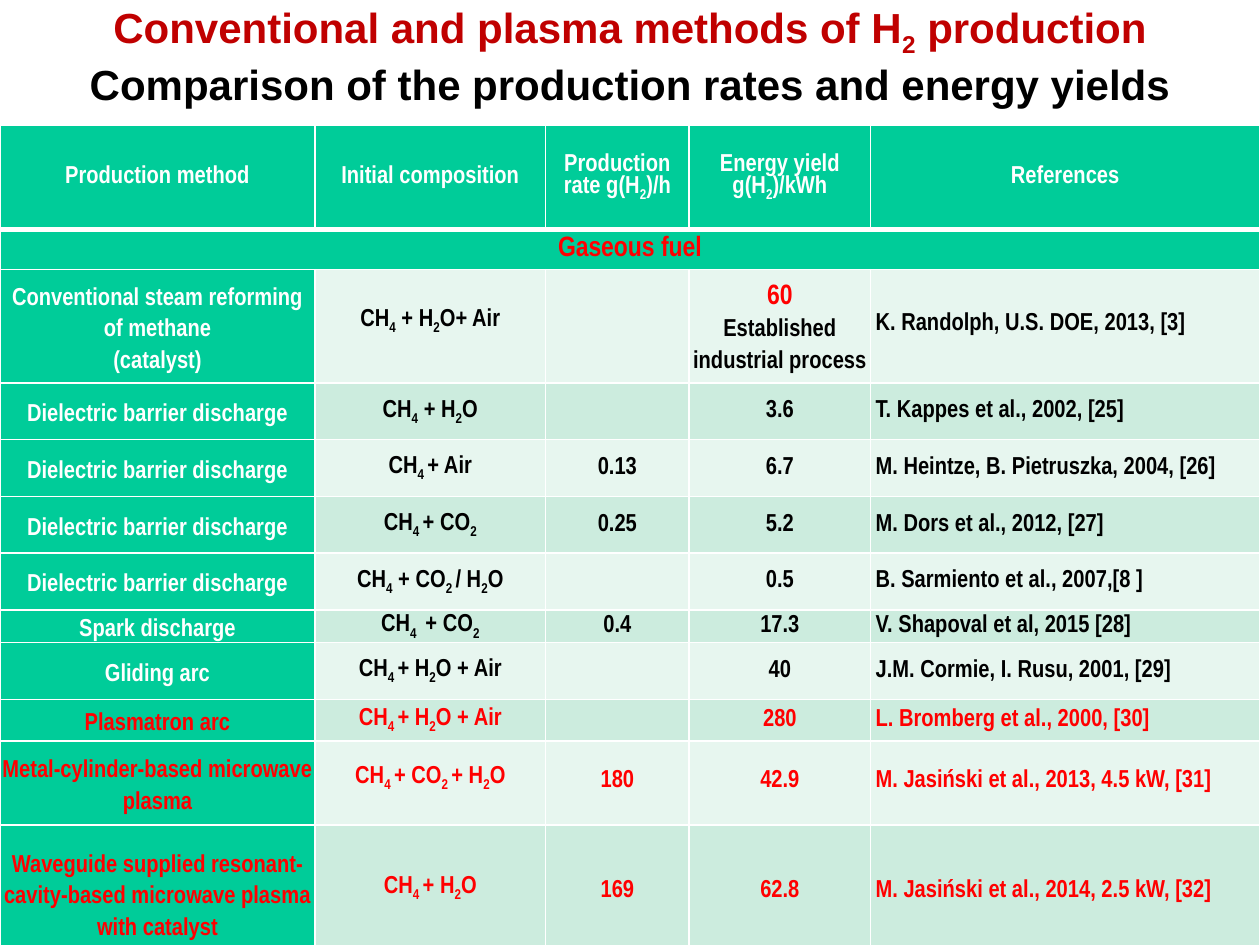
from dataclasses import dataclass
from lxml.etree import SubElement
from pptx import Presentation
from pptx.dml.color import RGBColor
from pptx.enum.text import MSO_ANCHOR, MSO_AUTO_SIZE, PP_ALIGN
from pptx.oxml.ns import qn
from pptx.table import _Cell
from pptx.text.text import Font, _Paragraph
from pptx.util import Inches, Pt

GREEN, PALE, MINT = "00CC99", "E7F6EF", "CCECDE"
WHITE, BLACK, RED, DARK_RED = "FFFFFF", "000000", "FF0000", "C00000"
COLUMN_WIDTHS = [2.5, 1.83, 1.14, 1.44, 3.09]
HEADER_HEIGHT, SECTION_HEIGHT = 0.83, 0.32
PROPORTIONAL, EXACT, NARROW = 0.9, Pt(18), Pt(11)
HEADERS = ["Production method", "Initial composition", "Production rate g(H{2})/h",
           "Energy yield g(H{2})/kWh", "References"]
TITLE_LINES = [("Conventional and plasma methods of H{2} production", DARK_RED),
               ("Comparison of the production rates and energy yields", BLACK)]


@dataclass
class Method:
    height: float
    name: str
    composition: str
    rate: str
    energy: str
    reference: str
    highlighted: bool = False
    spacing: float | int = PROPORTIONAL


BARRIER = "Dielectric barrier discharge"
METHODS = [
    Method(0.9, "Conventional steam reforming of methane\n(catalyst)", "CH{4} + H{2}O+ Air", "",
           "60\nEstablished industrial process", "K. Randolph, U.S. DOE, 2013, [3]", spacing=NARROW),
    Method(0.45, BARRIER, "CH{4} + H{2}O", "", "3.6", "T. Kappes et al., 2002, [25]"),
    Method(0.45, BARRIER, "CH{4 }+ Air", "0.13", "6.7", "M. Heintze, B. Pietruszka, 2004, [26]"),
    Method(0.45, BARRIER, "CH{4 }+ CO{2}", "0.25", "5.2", "M. Dors et al., 2012, [27]"),
    Method(0.45, BARRIER, "CH{4} + CO{2 }/ H{2}O", "", "0.5", "B. Sarmiento et al., 2007,[8 ]"),
    Method(0.26, "Spark discharge", "CH{4 } + CO{2}", "0.4", "17.3", "V. Shapoval et al, 2015 [28]"),
    Method(0.45, "Gliding arc", "CH{4 }+ H{2}O + Air", "", "40", "J.M. Cormie, I. Rusu, 2001, [29]"),
    Method(0.33, "Plasmatron arc", "CH{4 }+ H{2}O + Air", "", "280", "L. Bromberg et al., 2000, [30]", True),
    Method(0.67, "Metal-cylinder-based microwave plasma", "CH{4 }+ CO{2 }+ H{2}O", "180", "42.9",
           "M. Jasiński et al., 2013, 4.5 kW, [31]", True, NARROW),
    Method(1.08, "Waveguide supplied resonant-cavity-based microwave plasma\nwith catalyst",
           "CH{4 }+ H{2}O", "169", "62.8", "M. Jasiński et al., 2014, 2.5 kW, [32]", True, NARROW),
]


def rgb(color: str) -> RGBColor:
    return RGBColor.from_string(color)


def style_font(font: Font, size: float, color: str, name: str = "Arial Narrow") -> None:
    font.name, font.size, font.bold = name, Pt(size), True
    font.color.rgb = rgb(color)


def add_formula(paragraph: _Paragraph, text: str) -> None:
    for index, part in enumerate(text.replace("}", "{").split("{")):
        if part:
            run = paragraph.add_run()
            run.text = part
            if index % 2:
                run._r.get_or_add_rPr().set("baseline", "-25000")


def add_borders(cell: _Cell, bottom: float) -> None:
    properties = cell._tc.get_or_add_tcPr()
    for side, width in [("L", 1), ("R", 1), ("T", 1), ("B", bottom)]:
        line = SubElement(properties, qn(f"a:ln{side}"), w=str(Pt(width)))
        fill = SubElement(line, qn("a:solidFill"))
        SubElement(fill, qn("a:srgbClr"), val=WHITE)


def fill_cell(cell: _Cell, text: str, color: str, fill: str, size: float = 14,
              spacing: float | int = PROPORTIONAL, align: PP_ALIGN = PP_ALIGN.CENTER,
              left: float = 0, bottom: float = 1) -> None:
    add_borders(cell, bottom)
    cell.fill.solid()
    cell.fill.fore_color.rgb = rgb(fill)
    cell.vertical_anchor = MSO_ANCHOR.MIDDLE
    cell.margin_left = Inches(left)
    cell.margin_right = cell.margin_top = cell.margin_bottom = 0
    frame = cell.text_frame
    for index, line in enumerate(text.split("\n")):
        paragraph = frame.add_paragraph() if index else frame.paragraphs[0]
        paragraph.alignment = align
        paragraph.line_spacing = spacing
        style_font(paragraph.font, size, color)
        add_formula(paragraph, line)


def add_title(slide) -> None:
    title = slide.shapes.title
    title.left, title.top, title.width, title.height = 0, Inches(0.01), Inches(10), Inches(0.9)
    frame = title.text_frame
    frame.margin_left = frame.margin_right = frame.margin_top = frame.margin_bottom = 0
    frame.vertical_anchor = MSO_ANCHOR.TOP
    frame.word_wrap = True
    frame.auto_size = MSO_AUTO_SIZE.NONE
    for index, (text, color) in enumerate(TITLE_LINES):
        paragraph = frame.add_paragraph() if index else frame.paragraphs[0]
        paragraph.alignment = PP_ALIGN.CENTER
        paragraph.line_spacing = 1.0
        paragraph.space_before = Pt(0)
        style_font(paragraph.font, 24, color, "Arial")
        add_formula(paragraph, text)


def add_method(cells: list[_Cell], method: Method, background: str) -> None:
    accent = RED if method.highlighted else WHITE
    ink = RED if method.highlighted else BLACK
    fill_cell(cells[0], method.name, accent, GREEN, spacing=EXACT)
    for cell, text in zip(cells[1:4], [method.composition, method.rate, method.energy]):
        spacing = EXACT if "\n" in text else method.spacing
        fill_cell(cell, text, ink, background, spacing=spacing)
    fill_cell(cells[4], method.reference, ink, background, spacing=method.spacing,
              align=PP_ALIGN.JUSTIFY, left=0.04)


def add_comparison_table(slide) -> None:
    heights = [HEADER_HEIGHT, SECTION_HEIGHT] + [method.height for method in METHODS]
    table = slide.shapes.add_table(len(heights), len(COLUMN_WIDTHS), 0, Inches(0.99),
                                   Inches(10), Inches(sum(heights))).table
    table.first_row = table.horz_banding = False
    for column, width in zip(table.columns, COLUMN_WIDTHS):
        column.width = Inches(width)
    for row, height in zip(table.rows, heights):
        row.height = Inches(height)
    for cell, text in zip(table.rows[0].cells, HEADERS):
        fill_cell(cell, text, WHITE, GREEN, bottom=3)
    table.cell(1, 0).merge(table.cell(1, len(COLUMN_WIDTHS) - 1))
    fill_cell(table.cell(1, 0), "Gaseous fuel", RED, GREEN, size=16)
    for index, method in enumerate(METHODS):
        add_method(list(table.rows[index + 2].cells), method, MINT if index % 2 else PALE)
    style_font(table.cell(2, 3).text_frame.paragraphs[0].font, 16, RED)


def main() -> None:
    presentation = Presentation()
    presentation.slide_width, presentation.slide_height = Inches(10), Inches(7.5)
    slide = presentation.slides.add_slide(presentation.slide_layouts[5])
    add_title(slide)
    add_comparison_table(slide)
    presentation.save("out.pptx")


if __name__ == "__main__":
    main()
